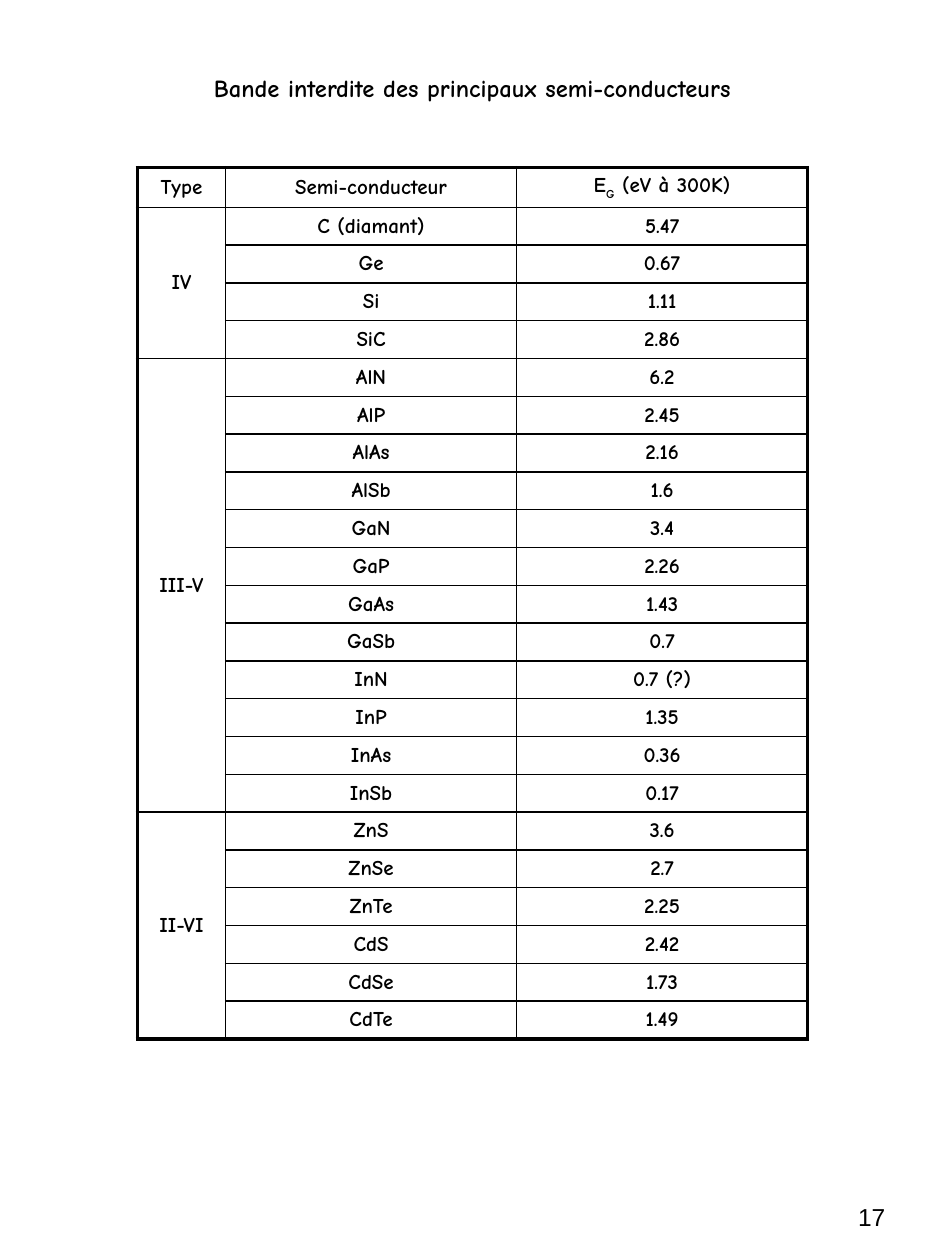
from dataclasses import dataclass

from lxml.etree import SubElement
from pptx import Presentation
from pptx.dml.color import RGBColor
from pptx.enum.text import MSO_ANCHOR, PP_ALIGN
from pptx.oxml.ns import qn
from pptx.util import Inches, Pt

TITLE = "Bande interdite des principaux semi-conducteurs"
PAGE_NUMBER = "17"
HEADERS = ["Type", "Semi-conducteur", [("E", 0), ("G", -25), (" (eV à 300K)", 0)]]
GROUPS = {
    "IV": [("C (diamant)", "5.47"), ("Ge", "0.67"), ("Si", "1.11"), ("SiC", "2.86")],
    "III-V": [
        ("AlN", "6.2"), ("AlP", "2.45"), ("AlAs", "2.16"), ("AlSb", "1.6"),
        ("GaN", "3.4"), ("GaP", "2.26"), ("GaAs", "1.43"), ("GaSb", "0.7"),
        ("InN", "0.7 (?)"), ("InP", "1.35"), ("InAs", "0.36"), ("InSb", "0.17"),
    ],
    "II-VI": [
        ("ZnS", "3.6"), ("ZnSe", "2.7"), ("ZnTe", "2.25"),
        ("CdS", "2.42"), ("CdSe", "1.73"), ("CdTe", "1.49"),
    ],
}
COLUMN_WIDTHS = [0.7, 2.31, 2.31]
ROW_HEIGHT = 0.3
TABLE_TOP = 1.33
SLIDE_WIDTH, SLIDE_HEIGHT = 7.5, 10
MARGIN = 0.05 * SLIDE_WIDTH


@dataclass(frozen=True)
class Theme:
    ink: str = "000000"
    font: str = "Comic Neue"
    number_font: str = "Arial"
    title_size: float = 14
    cell_size: float = 12
    inner_line: float = 1
    outer_line: float = 2.25


THEME = Theme()


def write(frame, content, size, font=THEME.font, bold=True,
          align=PP_ALIGN.CENTER, anchor=MSO_ANCHOR.MIDDLE, space_before=0):
    """Fill a frame with a string or (text, baseline shift) pairs; space_before is in percent."""
    frame.word_wrap = True
    frame.vertical_anchor = anchor
    paragraph = frame.paragraphs[0]
    paragraph.alignment = align
    if space_before:
        spacing = SubElement(paragraph._p.get_or_add_pPr(), qn("a:spcBef"))
        SubElement(spacing, qn("a:spcPct"), val=str(space_before * 1000))
    for text, shift in [(content, 0)] if isinstance(content, str) else content:
        run = paragraph.add_run()
        run.text = text
        run.font.name = font
        run.font.size = Pt(size)
        run.font.bold = bold
        run.font.color.rgb = RGBColor.from_string(THEME.ink)
        if shift:
            run._r.get_or_add_rPr().set("baseline", str(shift * 1000))


def draw_borders(cell, outer_sides):
    properties = cell._tc.get_or_add_tcPr()
    for side in "LRTB":
        width = THEME.outer_line if side in outer_sides else THEME.inner_line
        line = SubElement(properties, qn(f"a:ln{side}"), w=str(Pt(width)))
        fill = SubElement(line, qn("a:solidFill"))
        SubElement(fill, qn("a:srgbClr"), val=THEME.ink)


def add_band_gap_table(slide):
    rows = [HEADERS]
    spans = {}
    for group, members in GROUPS.items():
        spans[len(rows)] = len(members)
        for index, member in enumerate(members):
            rows.append(["" if index else group, *member])

    width = sum(COLUMN_WIDTHS)
    table = slide.shapes.add_table(
        len(rows), len(COLUMN_WIDTHS), Inches((SLIDE_WIDTH - width) / 2),
        Inches(TABLE_TOP), Inches(width), Inches(ROW_HEIGHT * len(rows))).table
    table.first_row = table.horz_banding = False
    for column, column_width in zip(table.columns, COLUMN_WIDTHS):
        column.width = Inches(column_width)
    for row in table.rows:
        row.height = Inches(ROW_HEIGHT)
    for start, count in spans.items():
        table.cell(start, 0).merge(table.cell(start + count - 1, 0))

    for row_index, row in enumerate(rows):
        for column_index, content in enumerate(row):
            cell = table.cell(row_index, column_index)
            height = cell.span_height if cell.is_merge_origin else 1
            edges = {
                "L": column_index == 0,
                "R": column_index == len(row) - 1,
                "T": row_index == 0,
                "B": row_index + height == len(rows),
            }
            draw_borders(cell, [side for side, outer in edges.items() if outer])
            cell.fill.background()
            cell.vertical_anchor = MSO_ANCHOR.MIDDLE
            if content:
                write(cell.text_frame, content, THEME.cell_size, anchor=None, space_before=20)
                cell.vertical_anchor = MSO_ANCHOR.MIDDLE


def main():
    presentation = Presentation()
    presentation.slide_width = Inches(SLIDE_WIDTH)
    presentation.slide_height = Inches(SLIDE_HEIGHT)
    slide = presentation.slides.add_slide(presentation.slide_layouts[5])

    title = slide.shapes.title
    title.left, title.top = Inches(MARGIN), Inches(0.04 * SLIDE_HEIGHT)
    title.width, title.height = Inches(SLIDE_WIDTH - 2 * MARGIN), Inches(0.06 * SLIDE_HEIGHT)
    write(title.text_frame, TITLE, THEME.title_size)

    add_band_gap_table(slide)

    number_width = 1.75
    number = slide.shapes.add_textbox(
        Inches(SLIDE_WIDTH - MARGIN - number_width), Inches(9.49),
        Inches(number_width), Inches(0.31))
    write(number.text_frame, PAGE_NUMBER, THEME.title_size, font=THEME.number_font,
          bold=False, align=PP_ALIGN.RIGHT, anchor=MSO_ANCHOR.TOP)

    presentation.save("out.pptx")


if __name__ == "__main__":
    main()
